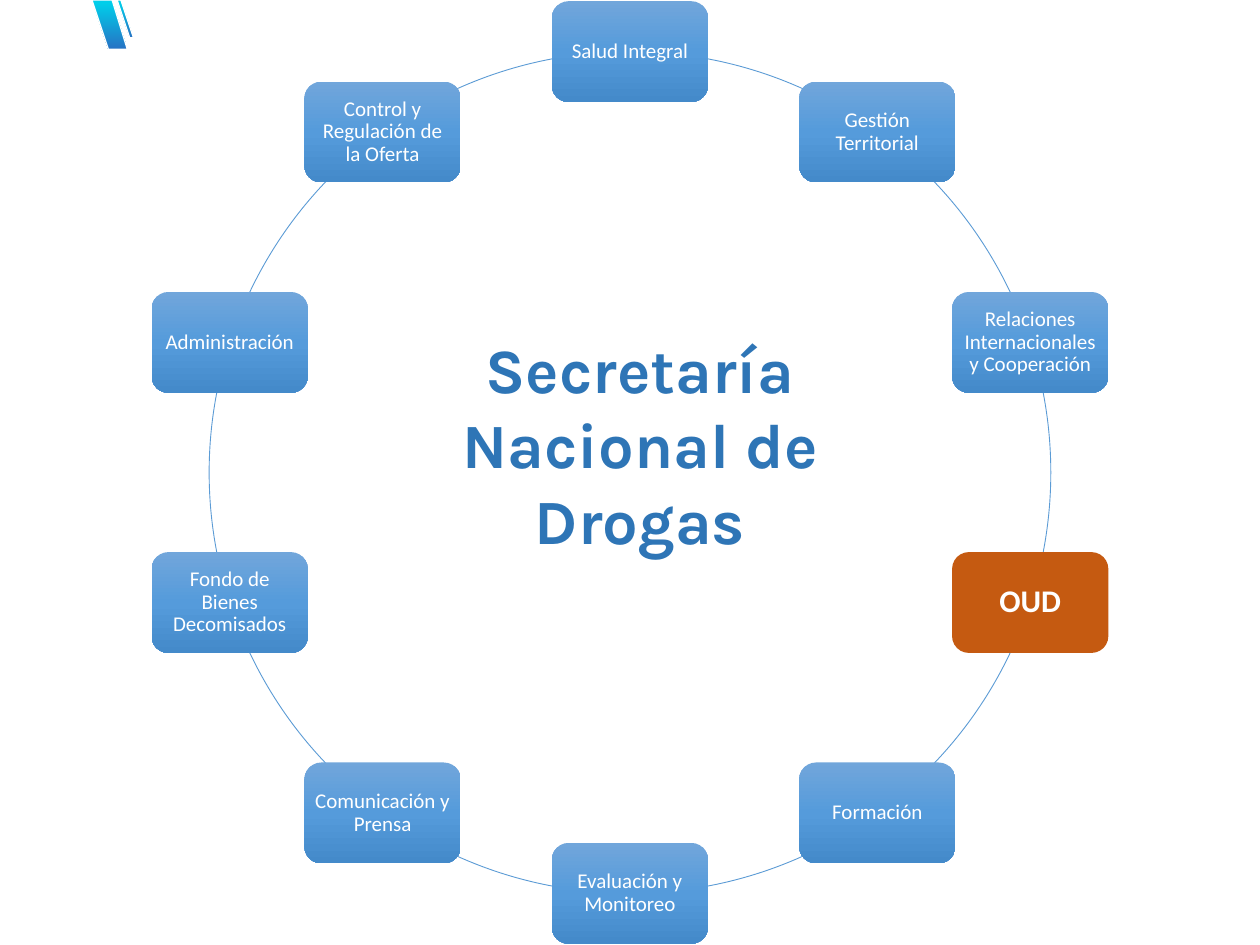
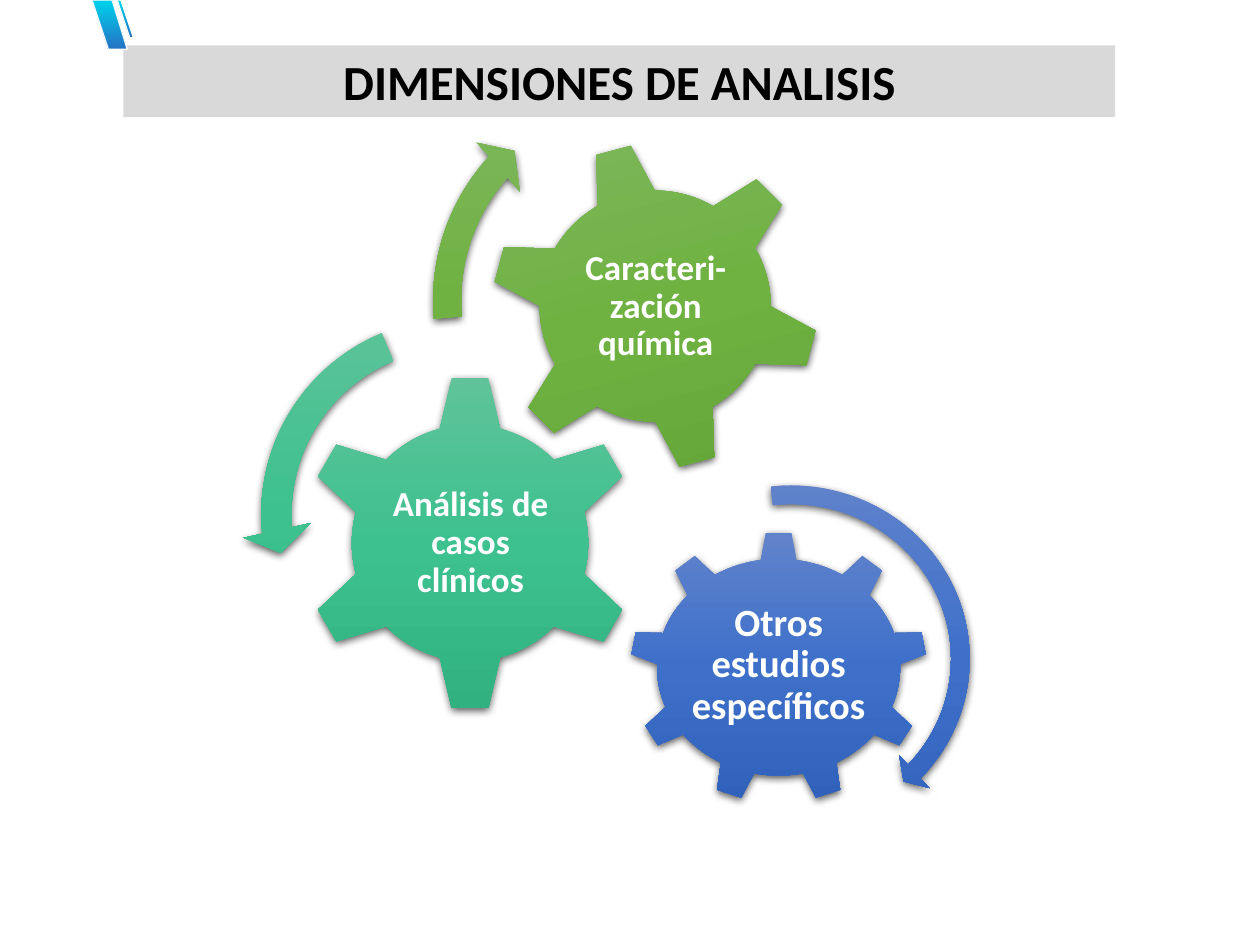
from math import cos, radians, sin

from lxml.etree import SubElement
from pptx import Presentation
from pptx.dml.color import RGBColor
from pptx.enum.shapes import MSO_SHAPE as Preset
from pptx.enum.text import MSO_ANCHOR as Anchor, MSO_AUTO_SIZE as AutoSize, PP_ALIGN as Align
from pptx.oxml.ns import qn
from pptx.util import Inches, Pt

WHITE = RGBColor(0xFF, 0xFF, 0xFF)
BLACK = RGBColor(0x00, 0x00, 0x00)
BAND_GREY = RGBColor(0xD9, 0xD9, 0xD9)
HEADING_BLUE = RGBColor(0x2E, 0x75, 0xB6)
RING_BLUE = RGBColor(0x5B, 0x9B, 0xD5)
OUD_ORANGE = RGBColor(0xC5, 0x5A, 0x11)


def three_stops(top, middle, bottom):
    return [(0, RGBColor.from_string(top)), (50, RGBColor.from_string(middle)),
            (100, RGBColor.from_string(bottom))]


STRIPE_STOPS = [(6, RGBColor(0x00, 0xCE, 0xEA)), (100, RGBColor(0x26, 0x73, 0xC4))]
UNIT_STOPS = three_stops("71A6DB", "559BDB", "448ACA")
BLUE_STOPS = three_stops("6183CB", "3E70CA", "3062BB")
TEAL_STOPS = three_stops("60C39A", "3DC18F", "31B080")
GREEN_STOPS = three_stops("81B861", "6FB242", "62A336")

BODY_FONT = "Calibri"
HEADING_FONT = "Karla"

CENTRE_X, CENTRE_Y, RADIUS = 5, 3.75, 3.34
UNIT_W, UNIT_H = 1.24, 0.8
UNITS = [
    "Salud Integral",
    "Gestión Territorial",
    "Relaciones Internacionales y Cooperación",
    "OUD",
    "Formación",
    "Evaluación y Monitoreo",
    "Comunicación y Prensa",
    "Fondo de Bienes Decomisados",
    "Administración",
    "Control y Regulación de la Oferta",
]

STRIPES = [
    [(0.73, 0), (0.86, 0.39), (1.01, 0.39), (0.89, 0)],
    [(0.93, 0), (1.03, 0.3), (1.06, 0.3), (0.96, 0)],
]

# preset, box, rotation, stops, label, label box, label size
GEARS = [
    (Preset.GEAR_9, (5, 4.22, 2.36, 2.15), 0, BLUE_STOPS,
     "Otros estudios específicos", (5.46, 4.73, 1.44, 1.1), 22),
    (Preset.GEAR_6, (2.39, 2.97, 2.68, 2.68), 0, TEAL_STOPS,
     "Análisis de casos clínicos", (3.07, 3.65, 1.33, 1.32), 20),
    (Preset.GEAR_6, (3.89, 1.12, 2.62, 2.62), 345, GREEN_STOPS,
     "Caracteri-zación química", (4.47, 1.7, 1.47, 1.47), 20),
]

# preset, box, stops, adjustments
TURN_ARROWS = [
    (Preset.CIRCULAR_ARROW, (4.76, 3.75, 3.04, 2.96), BLUE_STOPS,
     (0.05, 2.99, 25.49, 157.93, 0.06)),
    (Preset.LEFT_CIRCULAR_ARROW, (1.92, 2.37, 3.42, 3.42), TEAL_STOPS,
     (0.07, 4.3, 104.89, 148.38, 0.08)),
    (Preset.CIRCULAR_ARROW, (3.29, 0.54, 3.69, 3.69), GREEN_STOPS,
     (0.06, 3.94, 133.14, 105.08, 0.07)),
]


def inches(box):
    return [Inches(length) for length in box]


def fill_downwards(shape, stops):
    """Fill with a gradient that runs from top to bottom."""
    shape.fill.gradient()
    shape.fill.gradient_angle = 270
    stop_list = shape.element.spPr.find(qn("a:gradFill")).find(qn("a:gsLst"))
    for old_stop in list(stop_list):
        stop_list.remove(old_stop)
    for percent, color in stops:
        stop = SubElement(stop_list, qn("a:gs"), pos=str(percent * 1000))
        SubElement(stop, qn("a:srgbClr"), val=str(color))


def drop_shadow(shape):
    effects = shape.element.spPr.find(qn("a:effectLst"))
    shadow = SubElement(effects, qn("a:outerShdw"), blurRad=str(Pt(4.5)),
                        dist=str(Pt(1.5)), dir="5400000", rotWithShape="0")
    color = SubElement(shadow, qn("a:srgbClr"), val=str(BLACK))
    SubElement(color, qn("a:alpha"), val="63000")


def add_preset(slide, preset, box):
    """Add a preset shape with neither outline nor shadow."""
    shape = slide.shapes.add_shape(preset, *inches(box))
    shape.shadow.inherit = False
    shape.line.fill.background()
    return shape


def write(shape, text, size, color=WHITE, font=BODY_FONT, bold=True,
          anchor=Anchor.MIDDLE, margin=None, line_spacing=None):
    frame = shape.text_frame
    frame.word_wrap = True
    frame.auto_size = AutoSize.NONE
    frame.vertical_anchor = anchor
    if margin is not None:
        frame.margin_left = frame.margin_right = Inches(margin)
        frame.margin_top = frame.margin_bottom = Inches(margin)
    paragraph = frame.paragraphs[0]
    paragraph.alignment = Align.CENTER
    paragraph.line_spacing = line_spacing
    run = paragraph.add_run()
    run.text = text
    run.font.name = font
    run.font.size = Pt(size)
    run.font.bold = bold
    run.font.color.rgb = color


def add_stripes(slide):
    for corners in STRIPES:
        start, *others = [inches(corner) for corner in corners]
        builder = slide.shapes.build_freeform(*start)
        builder.add_line_segments(others, close=True)
        stripe = builder.convert_to_shape()
        stripe.shadow.inherit = False
        fill_downwards(stripe, STRIPE_STOPS)
        stripe.line.color.rgb = WHITE
        stripe.line.width = Pt(0.75)


def add_titled_slide(prs, title_box):
    """Add a slide with the corner stripes; return it and its placed title."""
    slide = prs.slides.add_slide(prs.slide_layouts[5])
    add_stripes(slide)
    title = slide.shapes.title
    title.left, title.top, title.width, title.height = inches(title_box)
    return slide, title


def add_ring(slide):
    box = (CENTRE_X - RADIUS, CENTRE_Y - RADIUS, 2 * RADIUS, 2 * RADIUS)
    ring = add_preset(slide, Preset.OVAL, box)
    ring.fill.background()
    ring.line.color.rgb = RING_BLUE
    ring.line.width = Pt(0.5)


def add_unit(slide, name, angle):
    """Place a unit on the ring, its angle measured clockwise from the top."""
    left = CENTRE_X + RADIUS * sin(radians(angle)) - UNIT_W / 2
    top = CENTRE_Y - RADIUS * cos(radians(angle)) - UNIT_H / 2
    unit = add_preset(slide, Preset.ROUNDED_RECTANGLE, (left, top, UNIT_W, UNIT_H))
    highlighted = name == "OUD"
    if highlighted:
        unit.fill.solid()
        unit.fill.fore_color.rgb = OUD_ORANGE
    else:
        fill_downwards(unit, UNIT_STOPS)
    write(unit, name, 18 if highlighted else 12, bold=highlighted,
          margin=0.04, line_spacing=0.9)


def add_gear(slide, preset, box, rotation, stops, label, label_box, size):
    gear = add_preset(slide, preset, box)
    gear.rotation = rotation
    fill_downwards(gear, stops)
    drop_shadow(gear)
    caption = slide.shapes.add_textbox(*inches(label_box))
    write(caption, label, size, margin=0.03, line_spacing=0.9)


def add_turn_arrow(slide, preset, box, stops, adjustments):
    arrow = add_preset(slide, preset, box)
    for index, value in enumerate(adjustments):
        arrow.adjustments[index] = value
    fill_downwards(arrow, stops)
    drop_shadow(arrow)


def build_secretariat(prs):
    slide, title = add_titled_slide(prs, (3.35, 2.57, 3.46, 1.92))
    write(title, "Secretaría Nacional de Drogas", 36, HEADING_BLUE,
          HEADING_FONT, anchor=Anchor.TOP)
    add_ring(slide)
    for index, name in enumerate(UNITS):
        add_unit(slide, name, index * 360 / len(UNITS))


def build_dimensions(prs):
    slide, title = add_titled_slide(prs, (0.98, 0.36, 7.87, 0.57))
    title.fill.solid()
    title.fill.fore_color.rgb = BAND_GREY
    write(title, "DIMENSIONES DE ANALISIS", 28, BLACK, anchor=Anchor.TOP)
    for gear in GEARS:
        add_gear(slide, *gear)
    for arrow in TURN_ARROWS:
        add_turn_arrow(slide, *arrow)


def main():
    prs = Presentation()
    prs.slide_width, prs.slide_height = Inches(10), Inches(7.5)
    build_secretariat(prs)
    build_dimensions(prs)
    prs.save("out.pptx")


if __name__ == "__main__":
    main()
